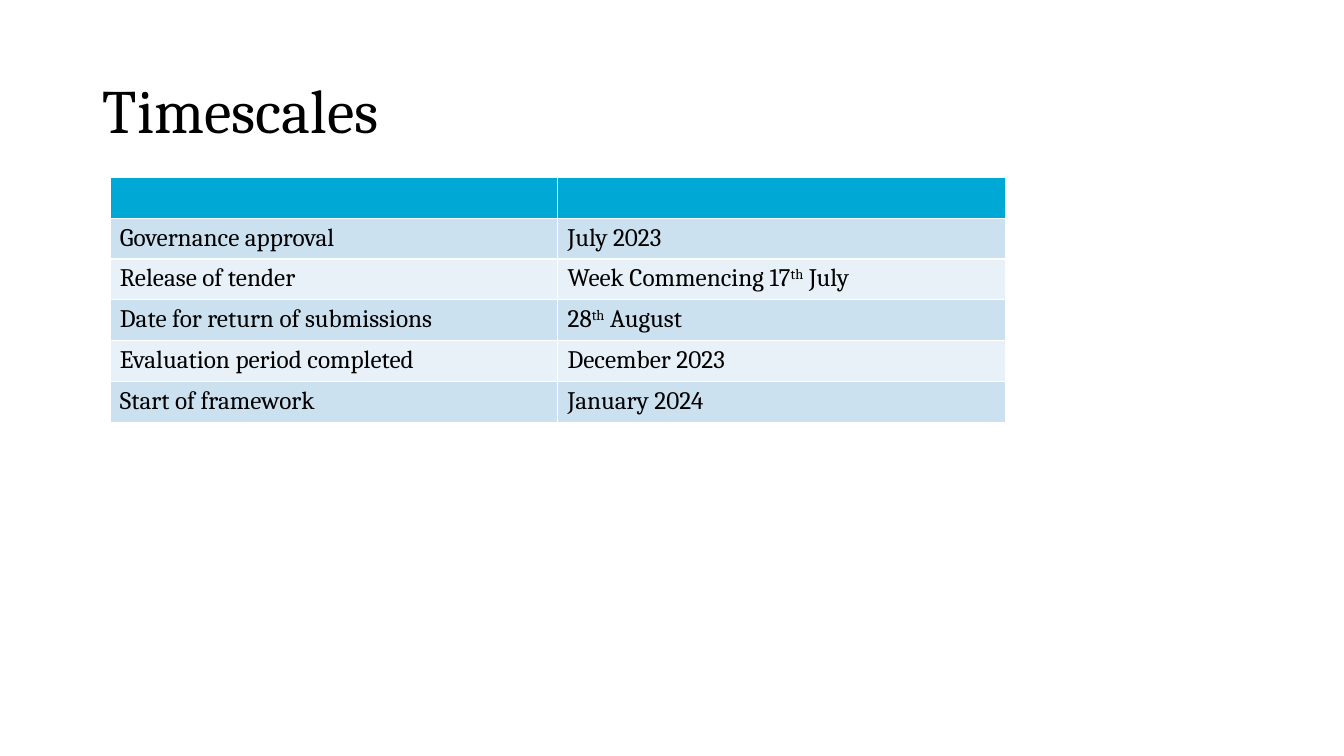
"""Build the Timescales slide with its table of tender dates."""
from pptx import Presentation
from pptx import util as u
from pptx.dml.color import RGBColor
from pptx.enum import text


def paint(fill, tone):
    fill.solid()
    fill.fore_color.rgb = RGBColor.from_string(tone)


def style(run, size):
    run.font.name = "Cambria"
    run.font.size = u.Pt(size)
    run.font.bold = False
    paint(run.font.fill, "000000")


deck = Presentation()
deck.slide_width, deck.slide_height = u.Inches(13.33), u.Inches(7.5)
slide = deck.slides.add_slide(deck.slide_layouts[5])

title = slide.shapes.title
title.left, title.top = u.Inches(0.92), u.Inches(0.4)
title.width, title.height = u.Inches(11.5), u.Inches(1.45)
frame = title.text_frame
frame.text = "Timescales"
frame.auto_size = text.MSO_AUTO_SIZE.NONE
frame.vertical_anchor = text.MSO_ANCHOR.MIDDLE
head = frame.paragraphs[0]
head.alignment = text.PP_ALIGN.LEFT
head.line_spacing = 0.9
style(head.runs[0], 44)

dates = [
    ("", ""),
    ("Governance approval", "July 2023"),
    ("Release of tender", "Week Commencing 17|th| July"),
    ("Date for return of submissions", "28|th| August"),
    ("Evaluation period completed", "December 2023"),
    ("Start of framework", "January 2024"),
]
table = slide.shapes.add_table(
    len(dates), 2, u.Inches(1.09), u.Inches(1.76), u.Inches(8.88), u.Inches(2.43)
).table

for i, row in enumerate(dates):
    tone = "00A8D6" if i == 0 else ("E7F1F7", "CCE1F0")[i % 2]
    for j, words in enumerate(row):
        cell = table.cell(i, j)
        paint(cell.fill, tone)
        if not words:
            continue
        para = cell.text_frame.paragraphs[0]
        for k, part in enumerate(words.split("|")):
            run = para.add_run()
            run.text = part
            style(run, 18)
            if k == 1:
                run.font._element.set("baseline", "30000")

deck.save("out.pptx")
